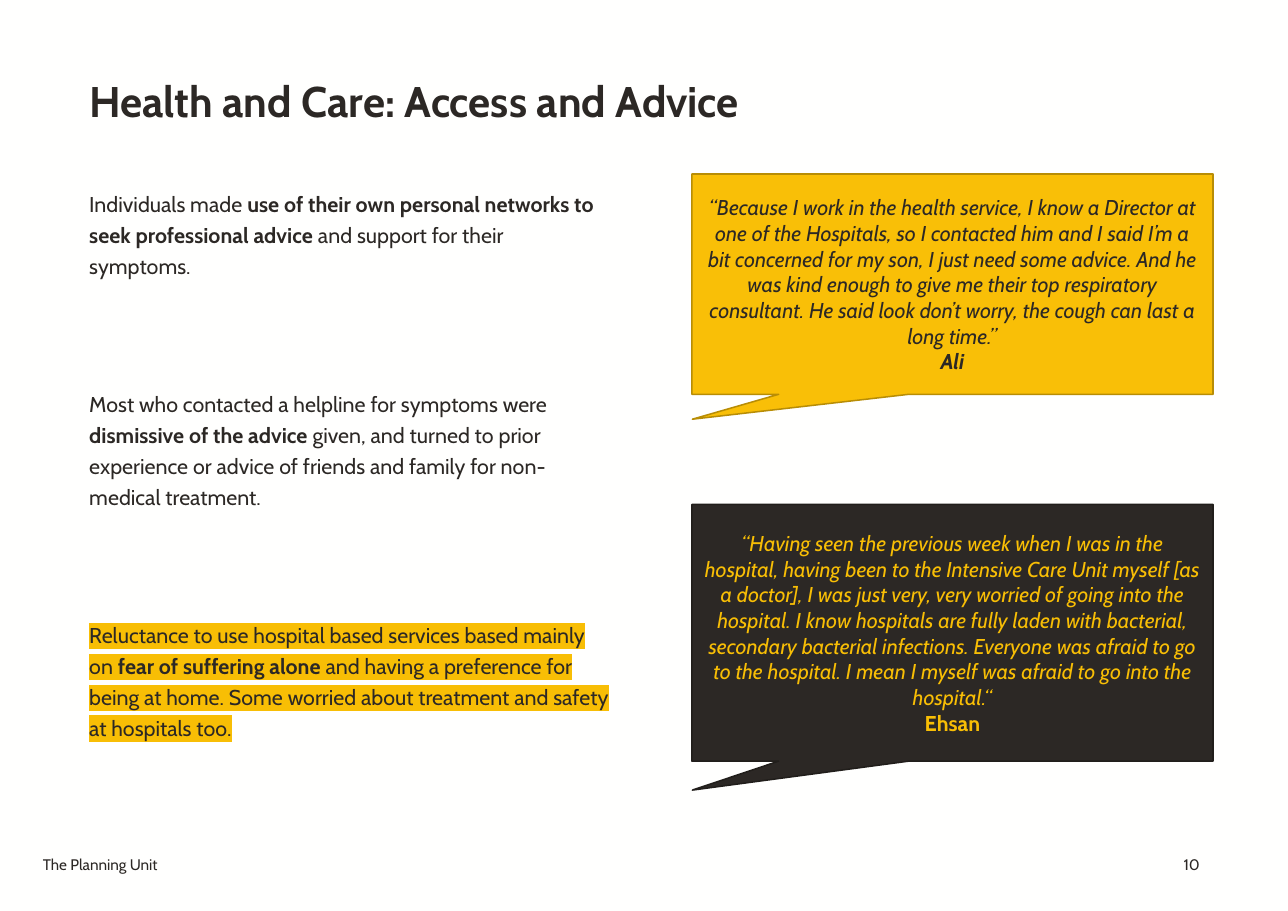
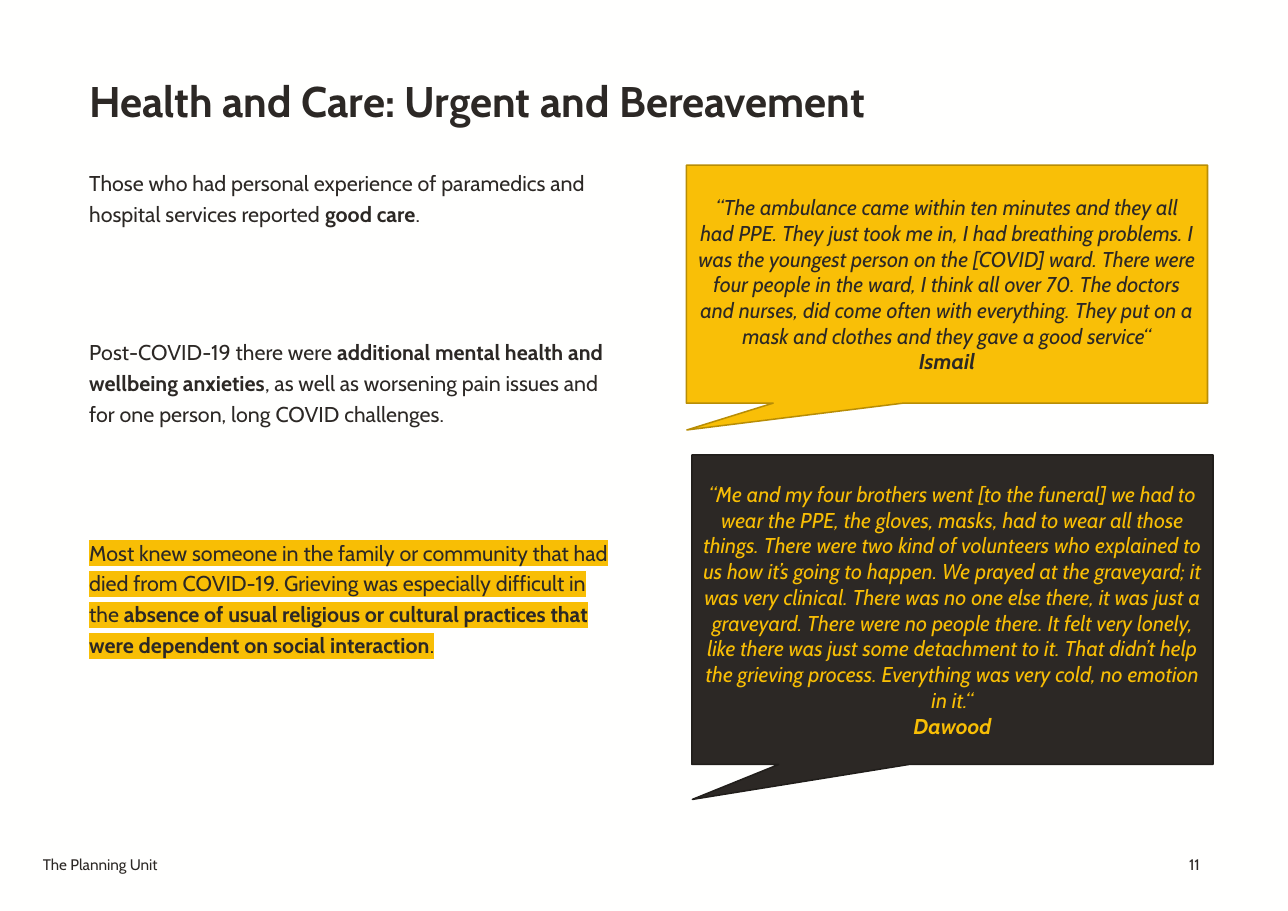
from lxml import etree
from pptx import Presentation
from pptx.dml.color import RGBColor
from pptx.enum.shapes import MSO_SHAPE
from pptx.enum.text import MSO_ANCHOR, PP_ALIGN
from pptx.oxml.ns import qn
from pptx.util import Inches, Pt

CALLOUT = MSO_SHAPE.RECTANGULAR_CALLOUT
TOP, MIDDLE, BOTTOM = MSO_ANCHOR.TOP, MSO_ANCHOR.MIDDLE, MSO_ANCHOR.BOTTOM
LEFT, CENTER, RIGHT = PP_ALIGN.LEFT, PP_ALIGN.CENTER, PP_ALIGN.RIGHT

FONT = "Cabin"
COLORS = {
    "paper": "FFFFFE",
    "ink": "2C2825",
    "ink_edge": "211E1B",
    "yellow": "F9BF07",
    "yellow_edge": "B88D05",
    "highlight": "F8BE05",
}
QUOTE_STYLES = {
    "yellow": {"fill": "yellow", "edge": "yellow_edge", "text": "ink"},
    "dark": {"fill": "ink", "edge": "ink_edge", "text": "highlight"},
}


def rgb(name):
    return RGBColor.from_string(COLORS[name])


def add_text(p, text, size=14, color="ink", bold=False, italic=False, highlight=None):
    r = p.add_run()
    r.text = text
    r.font.size = Pt(size)
    r.font.bold = bold
    r.font.italic = italic
    r.font.color.rgb = rgb(color)
    r.font.name = FONT
    if highlight:
        mark = etree.Element(qn("a:highlight"))
        etree.SubElement(mark, qn("a:srgbClr"), val=COLORS[highlight])
        r.font._element.find(qn("a:solidFill")).addnext(mark)


class Deck:
    def __init__(self):
        self.prs = Presentation()
        self.prs.slide_width = Inches(11.69)
        self.prs.slide_height = Inches(8.27)
        self.s = None

    def slide(self, title, number):
        self.s = self.prs.slides.add_slide(self.prs.slide_layouts[6])
        fill = self.s.background.fill
        fill.solid()
        fill.fore_color.rgb = rgb("paper")
        self.label(title, 0.73, 0.43, 10.24, 0.79, anchor=BOTTOM, size=28, bold=True)
        self.label("The Planning Unit", 0.31, 7.68, 1.28, 0.4, size=10)
        self.label(str(number), 10.18, 7.68, 0.79, 0.4, align=RIGHT, size=10)

    def box(self, x, y, w, h, anchor=TOP):
        sp = self.s.shapes.add_textbox(Inches(x), Inches(y), Inches(w), Inches(h))
        tf = sp.text_frame
        tf.word_wrap = True
        tf.vertical_anchor = anchor
        tf.margin_left = tf.margin_right = Inches(0.08)
        tf.margin_top = tf.margin_bottom = Inches(0.08)
        return tf

    def label(self, text, x, y, w, h, anchor=TOP, align=LEFT, **style):
        p = self.box(x, y, w, h, anchor).paragraphs[0]
        p.alignment = align
        add_text(p, text, **style)

    def findings(self, y, paragraphs):
        tf = self.box(0.73, y, 4.88, 6.06)
        last = len(paragraphs) - 1
        for i, (before, key, after) in enumerate(paragraphs):
            p = tf.add_paragraph() if i else tf.paragraphs[0]
            p.line_spacing = 1.2
            p.space_after = Pt(10 if i == last else 70.3)
            mark = "highlight" if i == last else None
            add_text(p, before, highlight=mark)
            add_text(p, key, bold=True, highlight=mark)
            add_text(p, after, highlight=mark)

    def quote(self, x, y, h, style, text, speaker, speaker_italic=True):
        look = QUOTE_STYLES[style]
        sp = self.s.shapes.add_shape(CALLOUT, Inches(x), Inches(y), Inches(4.73), Inches(h))
        sp.adjustments[0], sp.adjustments[1] = -0.499, 0.613
        sp.shadow.inherit = False
        sp.fill.solid()
        sp.fill.fore_color.rgb = rgb(look["fill"])
        sp.line.color.rgb = rgb(look["edge"])
        sp.line.width = Pt(1)
        tf = sp.text_frame
        tf.word_wrap = True
        tf.vertical_anchor = MIDDLE
        p = tf.paragraphs[0]
        p.alignment = CENTER
        add_text(p, text, color=look["text"], italic=True)
        p = tf.add_paragraph()
        p.alignment = CENTER
        add_text(p, speaker, color=look["text"], bold=True, italic=speaker_italic)


def main():
    deck = Deck()

    deck.slide("Health and Care: Access and Advice", 10)
    deck.findings(1.61, [
        ("Individuals made ",
         "use of their own personal networks to seek professional advice ",
         "and support for their symptoms."),
        ("Most who contacted a helpline for symptoms were ",
         "dismissive of the advice ",
         "given, and turned to prior experience or advice of friends and family "
         "for non-medical treatment."),
        ("Reluctance to use hospital based services based mainly on ",
         "fear of suffering alone ",
         "and having a preference for being at home. Some worried about treatment "
         "and safety at hospitals too."),
    ])
    deck.quote(6.28, 1.58, 2, "yellow",
               "“Because I work in the health service, I know a Director at one of the "
               "Hospitals, so I contacted him and I said I’m a bit concerned for my son, "
               "I just need some advice. And he was kind enough to give me their top "
               "respiratory consultant. He said look don’t worry, the cough can last a "
               "long time.”", "Ali")
    deck.quote(6.28, 4.58, 2.33, "dark",
               "“Having seen the previous week when I was in the hospital, having been to "
               "the Intensive Care Unit myself [as a doctor], I was just very, very worried "
               "of going into the hospital. I know hospitals are fully laden with bacterial, "
               "secondary bacterial infections. Everyone was afraid to go to the hospital. "
               "I mean I myself was afraid to go into the hospital.“", "Ehsan",
               speaker_italic=False)

    deck.slide("Health and Care: Urgent and Bereavement", 11)
    deck.findings(1.42, [
        ("Those who had personal experience of paramedics and hospital services reported ",
         "good care",
         "."),
        ("Post-COVID-19 there were ",
         "additional mental health and wellbeing anxieties",
         ", as well as worsening pain issues and for one person, long COVID challenges."),
        ("Most knew someone in the family or community that had died from COVID-19. "
         "Grieving was especially difficult in the ",
         "absence of usual religious or cultural practices that were dependent on "
         "social interaction",
         "."),
    ])
    deck.quote(6.23, 1.5, 2.16, "yellow",
               "“The ambulance came within ten minutes and they all had PPE. They just took "
               "me in, I had breathing problems. I was the youngest person on the [COVID] "
               "ward. There were four people in the ward, I think all over 70. The doctors "
               "and nurses, did come often with everything. They put on a mask and clothes "
               "and they gave a good service“", "Ismail")
    deck.quote(6.28, 4.13, 2.81, "dark",
               "“Me and my four brothers went [to the funeral] we had to wear the PPE, the "
               "gloves, masks, had to wear all those things. There were two kind of "
               "volunteers who explained to us how it’s going to happen. We prayed at the "
               "graveyard; it was very clinical. There was no one else there, it was just a "
               "graveyard. There were no people there. It felt very lonely, like there was "
               "just some detachment to it. That didn’t help the grieving process. "
               "Everything was very cold, no emotion in it.“", "Dawood")

    deck.prs.save("out.pptx")


if __name__ == "__main__":
    main()
